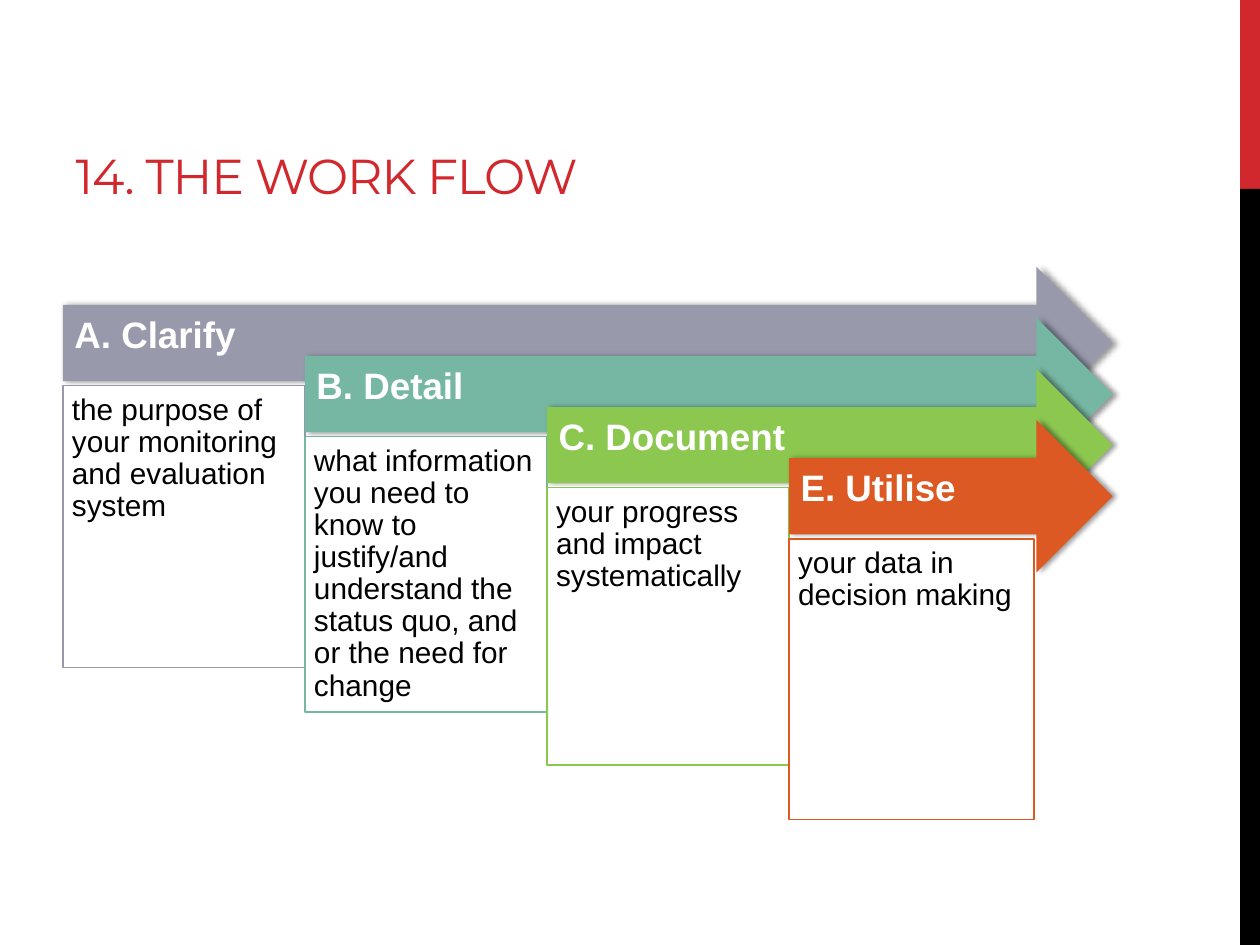
from lxml import etree
from pptx import Presentation
from pptx.dml.color import RGBColor
from pptx.enum.shapes import MSO_SHAPE
from pptx.enum.text import MSO_ANCHOR, PP_ALIGN
from pptx.oxml import parse_xml
from pptx.oxml.ns import nsdecls, qn
from pptx.util import Cm, Pt

RED = RGBColor(0xD1, 0x28, 0x2E)
BLACK = RGBColor(0, 0, 0)
WHITE = RGBColor(255, 255, 255)
GREY = RGBColor(0x98, 0x9A, 0xAC)
TEAL = RGBColor(0x76, 0xB7, 0xA3)
GREEN = RGBColor(0x8C, 0xC7, 0x4F)
RUST = RGBColor(0xDC, 0x59, 0x24)

# Content: heading, text, colour, box width and height in cm
TITLE = "14. THE WORK FLOW"
STEPS = [
    ("A. Clarify", "the purpose of your monitoring and evaluation system",
     GREY, 4.88, 5.69),
    ("B. Detail", "what information you need to know to justify/and understand "
     "the status quo, and or the need for change", TEAL, 4.88, 5.56),
    ("C. Document", "your progress and impact systematically",
     GREEN, 4.88, 5.59),
    ("E. Utilise", "your data in decision making", RUST, 4.93, 5.66),
]
BARS = [(0, 3.81, RED), (3.81, 15.24, BLACK)]

# Layout in cm
LEFT, TOP, RIGHT = 1.27, 5.38, 22.43
STEP_X, STEP_Y = 4.88, 1.03
ARROW_H, DROP = 3.07, 2.39


def add_shape(kind, x, y, w, h, fill, line=None):
    shape = slide.shapes.add_shape(kind, Cm(x), Cm(y), Cm(w), Cm(h))
    shape.shadow.inherit = False
    shape.fill.solid()
    shape.fill.fore_color.rgb = fill
    if line is None:
        shape.line.fill.background()
    else:
        shape.line.color.rgb = line
        shape.line.width = Pt(1)
    return shape


def set_text(shape, text, size, color, bold, anchor, pads):
    frame = shape.text_frame
    frame.word_wrap = True
    frame.vertical_anchor = anchor
    (frame.margin_left, frame.margin_top,
     frame.margin_right, frame.margin_bottom) = [Cm(pad) for pad in pads]
    par = frame.paragraphs[0]
    par.text = text
    par.alignment = PP_ALIGN.LEFT
    par.line_spacing = 0.9
    font = par.font
    font.name, font.size, font.bold = "Arial", Pt(size), bold
    font.color.rgb = color


def add_shadow(shape):
    effects = shape._element.spPr.find(qn("a:effectLst"))
    shade = parse_xml(
        f'<a:outerShdw {nsdecls("a")} blurRad="{Pt(3.1)}" dist="{Pt(1.8)}" '
        'dir="0" algn="ctr" rotWithShape="0"/>')
    color = etree.SubElement(shade, qn("a:srgbClr"), val="000000")
    etree.SubElement(color, qn("a:alpha"), val="40000")
    effects.append(shade)


deck = Presentation()
deck.slide_width, deck.slide_height = Cm(25.4), Cm(19.05)
slide = deck.slides.add_slide(deck.slide_layouts[5])

# Side bars
for y, h, color in BARS:
    add_shape(MSO_SHAPE.RECTANGLE, 25, y, 0.4, h, color)

# Title
title = slide.shapes.title
title.left, title.top = Cm(1.27), Cm(0.43)
title.width, title.height = Cm(16.08), Cm(3.81)
title.text_frame.vertical_anchor = MSO_ANCHOR.BOTTOM
head = title.text_frame.paragraphs[0]
head.text = TITLE
head.alignment = PP_ALIGN.LEFT
head.font.name, head.font.size = "Montserrat", Pt(28)
head.font.color.rgb = RED
head.runs[0]._r.get_or_add_rPr().set("spc", "-60")

# Stepped arrows, each with its box below
for i, (name, text, color, w, h) in enumerate(STEPS):
    x, y = LEFT + i * STEP_X, TOP + i * STEP_Y
    arrow = add_shape(MSO_SHAPE.RIGHT_ARROW, x, y, RIGHT - x, ARROW_H, color)
    add_shadow(arrow)
    set_text(arrow, name, 21, WHITE, True, MSO_ANCHOR.MIDDLE,
             (0.23, 0.23, 0.71, 0.48))
    box = add_shape(MSO_SHAPE.RECTANGLE, x, y + DROP, w, h, WHITE, color)
    set_text(box, text, 17, BLACK, False, MSO_ANCHOR.TOP, [0.18] * 4)

deck.save("out.pptx")
